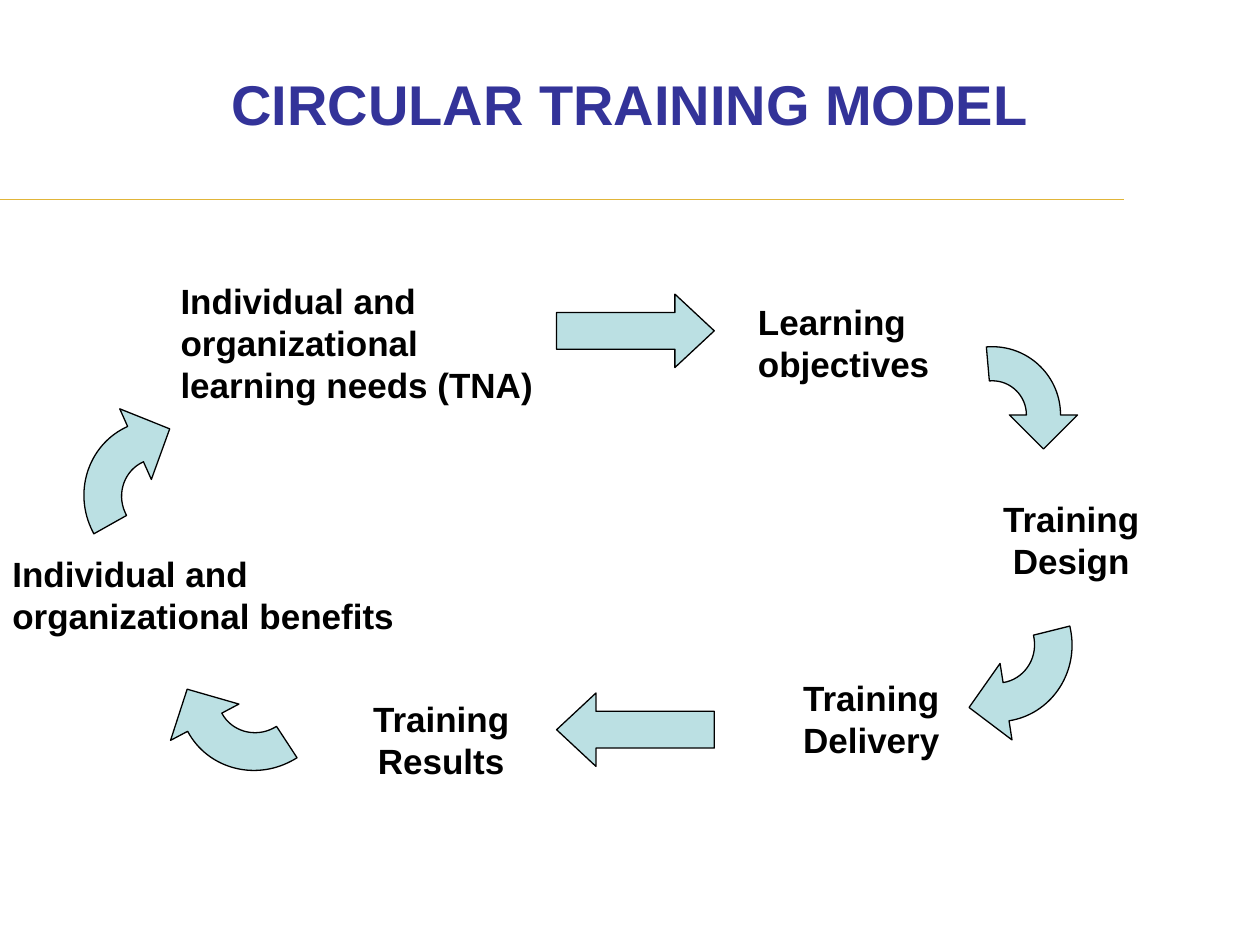
from collections import namedtuple
from dataclasses import dataclass
from math import cos, radians, sin, tan

from lxml.etree import SubElement
from pptx import Presentation
from pptx.dml.color import RGBColor
from pptx.enum.shapes import MSO_CONNECTOR, MSO_SHAPE
from pptx.enum.text import PP_ALIGN
from pptx.oxml.ns import qn
from pptx.util import Cm, Pt

Box = namedtuple("Box", "left top width height")


@dataclass(frozen=True)
class Theme:
    font: str = "Arial"
    title_size: int = 32
    label_size: int = 20
    title: RGBColor = RGBColor(0x33, 0x33, 0x99)
    ink: RGBColor = RGBColor(0, 0, 0)
    arrow: RGBColor = RGBColor(0xBB, 0xE0, 0xE3)
    rule: RGBColor = RGBColor(0xE1, 0xB5, 0x39)
    line_width: float = 0.75


THEME = Theme()
LEFT, CENTER = PP_ALIGN.LEFT, PP_ALIGN.CENTER
RADIUS = 10000

LABELS = [
    ("Individual and organizational learning needs (TNA)", LEFT, Box(3.39, 0, 7.82, 2.79)),
    ("Learning objectives", LEFT, Box(15.03, 0.43, 4.45, 1.96)),
    ("Training Design", CENTER, Box(19.69, 4.4, 3.81, 1.96)),
    ("Training Delivery", CENTER, Box(15.66, 8.01, 3.81, 1.96)),
    ("Training Results", CENTER, Box(6.99, 8.43, 3.81, 1.96)),
    ("Individual and organizational benefits", LEFT, Box(0, 5.51, 8.69, 1.96)),
]
STRAIGHT_ARROWS = [
    (Box(11.22, 0.43, 3.18, 1.48), 0),
    (Box(11.22, 8.47, 3.18, 1.48), 180),
]
BENT_ARROWS = [
    (Box(18.63, 1.49, 2.75, 2.75), 0),
    (Box(18.54, 5.98, 3.12, 3.02), 81.1),
    (Box(3.6, 7.0, 3.12, 3.02), 152),
    (Box(1.65, 3.01, 3.12, 3.02), 245.9),
]


def inside(region, box):
    return Box(region.left + box.left, region.top + box.top, box.width, box.height)


def add_label(page, box, text, align, size, color):
    frame = page.shapes.add_textbox(*map(Cm, box)).text_frame
    frame.word_wrap = True
    para = frame.paragraphs[0]
    para.alignment = align
    span = para.add_run()
    span.text = text
    span.font.name = THEME.font
    span.font.size = Pt(size)
    span.font.bold = True
    span.font.color.rgb = color


def style_arrow(shape, rotation):
    shape.rotation = rotation
    shape.shadow.inherit = False
    shape.fill.solid()
    shape.fill.fore_color.rgb = THEME.arrow
    shape.line.color.rgb = THEME.ink
    shape.line.width = Pt(THEME.line_width)


def add_straight_arrow(page, box, rotation):
    arrow = page.shapes.add_shape(MSO_SHAPE.RIGHT_ARROW, *map(Cm, box))
    arrow.adjustments[0] = 0.5
    arrow.adjustments[1] = 0.536
    style_arrow(arrow, rotation)


def polar(radius, degrees):
    return radius * cos(radians(degrees)), radius * sin(radians(degrees))


def arc(radius, start, end):
    pull = 4 / 3 * tan(radians(end - start) / 4)
    (x1, y1), (x2, y2) = polar(radius, start), polar(radius, end)
    return [(x1 - pull * y1, y1 + pull * x1), (x2 + pull * y2, y2 - pull * x2), (x2, y2)]


def bent_arrow_outline():
    return [
        ("moveTo", [(0.5, 0)]),
        ("cubicBezTo", arc(0.5, 0, -90)),
        ("cubicBezTo", arc(0.5, -90, -95)),
        ("lnTo", [polar(1, -95)]),
        ("cubicBezTo", arc(1, -95, -90)),
        ("cubicBezTo", arc(1, -90, 0)),
        *[("lnTo", [corner]) for corner in [(1, 0), (1.25, 0), (0.75, 0.5), (0.25, 0), (0.5, 0)]],
        ("close", []),
    ]


def add_bent_arrow(page, box, rotation):
    builder = page.shapes.build_freeform(0, 0)
    builder.add_line_segments([(RADIUS, 0), (RADIUS, RADIUS)])
    arrow = builder.convert_to_shape()
    arrow.left, arrow.top, arrow.width, arrow.height = map(Cm, box)
    outline = next(arrow.element.iter(qn("a:path")))
    for step in list(outline):
        outline.remove(step)
    outline.set("w", str(2 * RADIUS))
    outline.set("h", str(2 * RADIUS))
    for command, points in bent_arrow_outline():
        step = SubElement(outline, qn(f"a:{command}"))
        for x, y in points:
            point = SubElement(step, qn("a:pt"))
            point.set("x", str(round(RADIUS * (1 + x))))
            point.set("y", str(round(RADIUS * (1 + y))))
    style_arrow(arrow, rotation)


def add_title_band(page, box):
    bottom = box.top + box.height
    rule = page.shapes.add_connector(
        MSO_CONNECTOR.STRAIGHT, Cm(box.left), Cm(bottom), Cm(box.left + box.width), Cm(bottom)
    )
    rule.line.color.rgb = THEME.rule
    rule.line.width = Pt(THEME.line_width)
    SubElement(rule.element.spPr, qn("a:effectLst"))
    title_box = inside(box, Box(1.27, 1.27, 22.86, 1.98))
    add_label(page, title_box, "CIRCULAR TRAINING MODEL", CENTER, THEME.title_size, THEME.title)


def add_training_cycle(page, region):
    for text, align, box in LABELS:
        add_label(page, inside(region, box), text, align, THEME.label_size, THEME.ink)
    for box, rotation in STRAIGHT_ARROWS:
        add_straight_arrow(page, inside(region, box), rotation)
    for box, rotation in BENT_ARROWS:
        add_bent_arrow(page, inside(region, box), rotation)


def main():
    deck = Presentation()
    deck.slide_width, deck.slide_height = Cm(25.4), Cm(19.05)
    page = deck.slides.add_slide(deck.slide_layouts[6])
    add_title_band(page, Box(0, 0, 22.65, 4.02))
    add_training_cycle(page, Box(0, 5.5, 25.4, 10.4))
    deck.save("out.pptx")


if __name__ == "__main__":
    main()
